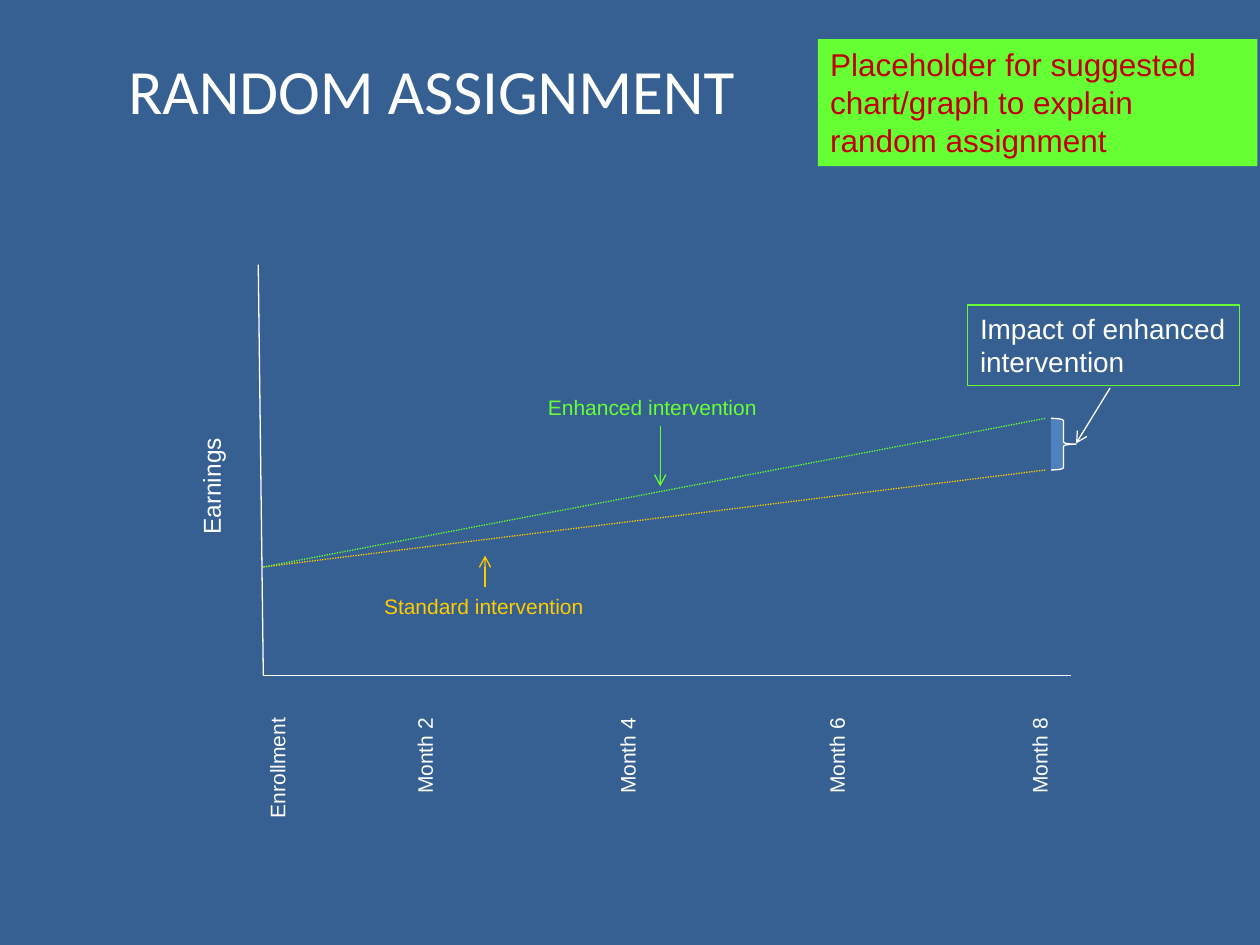
from lxml.etree import SubElement
from pptx import Presentation
from pptx.dml.color import RGBColor
from pptx.enum.dml import MSO_LINE
from pptx.enum.shapes import MSO_CONNECTOR, MSO_SHAPE
from pptx.enum.text import MSO_ANCHOR, PP_ALIGN
from pptx.oxml.ns import qn
from pptx.util import Inches, Pt

COLORS = {
    "background": "376092",
    "text": "FFFFFF",
    "enhanced": "66FF33",
    "standard": "FFCC00",
    "brace": "4F81BD",
    "note": "C00000",
}


def rgb(name):
    return RGBColor.from_string(COLORS[name])


def write(shape, text, size, color, font="Arial", align=PP_ALIGN.LEFT,
          anchor=MSO_ANCHOR.TOP, upward=False):
    frame = shape.text_frame
    frame.word_wrap = True
    frame.vertical_anchor = anchor
    if upward:
        shape.element.txBody.find(qn("a:bodyPr")).set("vert", "vert270")
    para = frame.paragraphs[0]
    para.alignment = align
    span = para.add_run()
    span.text = text
    span.font.size = Pt(size)
    span.font.name = font
    span.font.color.rgb = rgb(color)


def add_label(page, box, text, size, color, **style):
    label = page.shapes.add_textbox(*map(Inches, box))
    write(label, text, size, color, **style)
    return label


def add_panel(page, box, kind=MSO_SHAPE.RECTANGLE, fill=None, line=None):
    panel = page.shapes.add_shape(kind, *map(Inches, box))
    panel.shadow.inherit = False
    if fill:
        panel.fill.solid()
        panel.fill.fore_color.rgb = rgb(fill)
    else:
        panel.fill.background()
    if line:
        panel.line.color.rgb = rgb(line)
        panel.line.width = Pt(0.75)
    else:
        panel.line.fill.background()
    return panel


def add_line(page, start, end, color, dotted=False, arrow=False):
    line = page.shapes.add_connector(
        MSO_CONNECTOR.STRAIGHT, *map(Inches, (*start, *end)))
    line.line.color.rgb = rgb(color)
    line.line.width = Pt(0.75)
    if dotted:
        line.line.dash_style = MSO_LINE.ROUND_DOT
    if arrow:
        SubElement(line.line._get_or_add_ln(), qn("a:tailEnd"), type="arrow")
    SubElement(line.element.spPr, qn("a:effectLst"))
    return line


def add_axes(page, left, top, width, height):
    """Draw both axes with the earnings title and the time labels."""
    corner = (left + 0.04, top + height)
    add_line(page, corner, (left, top), "text")
    add_line(page, corner, (left + width, top + height), "text")
    add_label(page, (left - 0.54, top + 0.5, 0.44, 2.52), "Earnings", 14,
              "text", align=PP_ALIGN.CENTER, upward=True)
    ticks = [("Enrollment", 0, 1.06), ("Month 2", 1.17, 0.88),
             ("Month 4", 2.78, 0.88), ("Month 6", 4.44, 0.88),
             ("Month 8", 6.05, 0.88)]
    for text, offset, length in ticks:
        add_label(page, (left + offset, top + height + 0.24, 0.4, length),
                  text, 12, "text", align=PP_ALIGN.RIGHT, upward=True)


def add_trends(page, left, top, width, height):
    """Draw both dotted trends from a shared start, each with its label."""
    start = (left, top + height)
    right = left + width
    add_line(page, start, (right, top + 0.41), "standard", dotted=True)
    add_line(page, start, (right, top), "enhanced", dotted=True)

    labels = [
        ("Enhanced intervention", "enhanced", (2.16, -0.24, 1.98), 2, 0.48),
        ("Standard intervention", "standard", (0.86, 1.34, 1.8), 0, -0.25),
    ]
    for text, color, (dx, dy, label_width), side, reach in labels:
        x, y = left + dx, top + dy
        label = add_label(page, (x, y, label_width, 0.3), text, 12, color)
        middle = x + label_width / 2
        edge = y + (0.3 if side == 2 else 0)
        arrow = add_line(page, (middle, edge), (middle, edge + reach),
                         color, arrow=True)
        arrow.begin_connect(label, side)


def add_impact(page, left, top, width, height):
    """Brace the final gap and point the callout at it."""
    callout = add_panel(page, (left, top, width, 0.64), line="enhanced")
    write(callout, "Impact of enhanced intervention", 16, "text")
    brace = (left + 0.66, top + height - 0.41, 0.2, 0.41)
    add_panel(page, brace, MSO_SHAPE.RIGHT_BRACE, "brace", "text")
    add_line(page, (left + 1.13, top + 0.66), (left + 0.86, top + 1.1),
             "text", arrow=True)


def add_note(page, *box):
    note = add_panel(page, box, fill="enhanced")
    write(note, "Placeholder for suggested chart/graph to explain "
          "random assignment", 18, "note")


def main():
    deck = Presentation()
    deck.slide_width, deck.slide_height = Inches(10), Inches(7.5)
    page = deck.slides.add_slide(deck.slide_layouts[6])
    page.background.fill.solid()
    page.background.fill.fore_color.rgb = rgb("background")

    add_label(page, (0.92, 0.08, 9, 1.25), "RANDOM ASSIGNMENT", 36, "text",
              font="Calibri", anchor=MSO_ANCHOR.MIDDLE)
    add_axes(page, 2.05, 2.1, 6.45, 3.26)
    add_trends(page, 2.09, 3.32, 6.21, 1.18)
    add_impact(page, 7.68, 2.42, 2.16, 1.31)
    add_note(page, 6.49, 0.31, 3.49, 1.01)
    deck.save("out.pptx")


if __name__ == "__main__":
    main()
